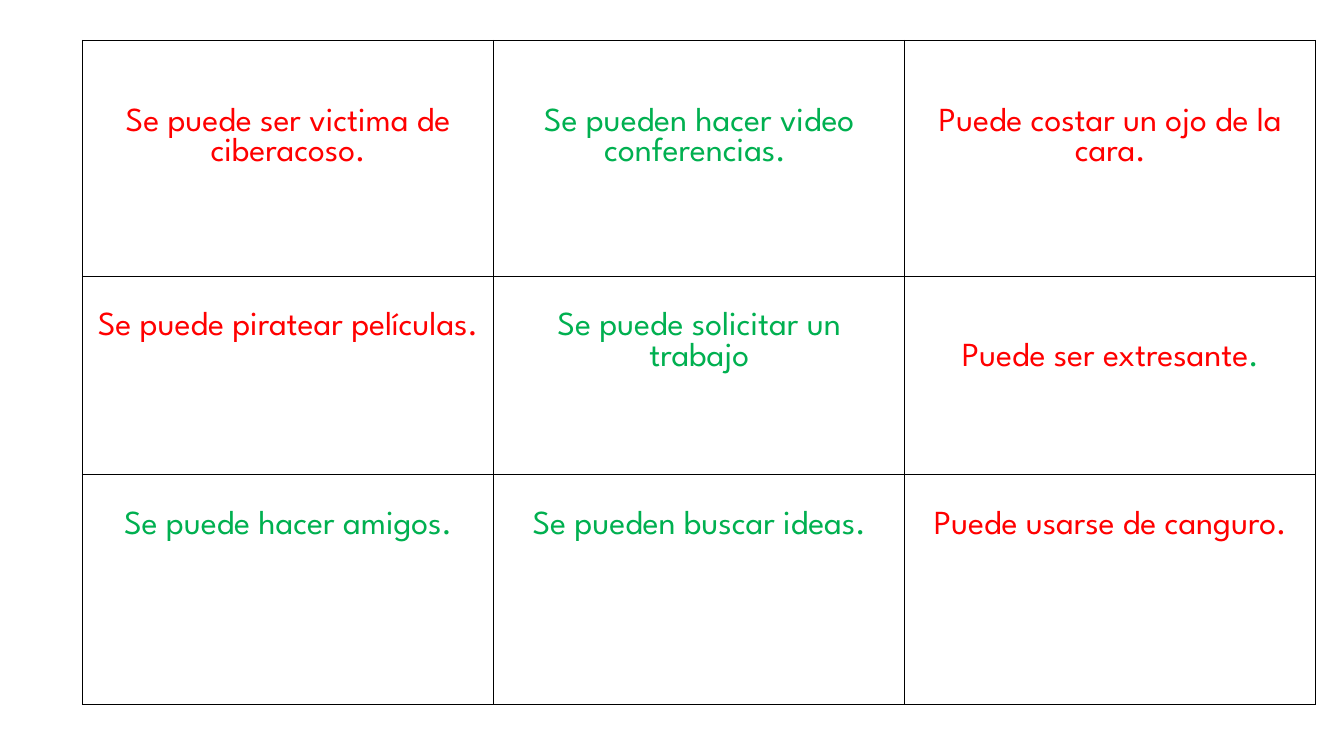
import pptx
import pptx.util
import pptx.dml.color
import pptx.enum.text
import pptx.oxml
import pptx.oxml.ns

Cm = pptx.util.Cm
Pt = pptx.util.Pt

COLORS = {"con": "FF0000", "pro": "00B050", "border": "000000"}
FONT = {"name": "League Spartan", "size": Pt(24)}
LINE = 0.78  # height of one text line, cm
MARGIN = 0.13  # plain cell margin, cm
COL_WIDTH = 10.36
ROW_HEIGHTS = [5.94, 5.0, 5.79]

# Each cell: lines of space above the text, then (text, colour) runs
CELLS = [
    [(2, [("Se puede ser victima de ciberacoso.", "con")]),
     (2, [("Se pueden hacer video conferencias. ", "pro")]),
     (2, [("Puede costar un ojo de la cara.", "con")])],
    [(1, [("Se puede piratear películas.", "con")]),
     (1, [("Se puede solicitar un trabajo", "pro")]),
     (2, [("Puede ser extresante", "con"), (".", "pro")])],
    [(1, [("Se puede hacer amigos.", "pro")]),
     (1, [("Se pueden buscar ideas.", "pro")]),
     (1, [("Puede usarse de canguro.", "con")])],
]


def set_borders(cell):
    tc_pr = cell._tc.get_or_add_tcPr()
    for side in ("lnL", "lnR", "lnT", "lnB"):
        tc_pr.append(pptx.oxml.parse_xml(
            f'<a:{side} {pptx.oxml.ns.nsdecls("a")} w="{Pt(1)}"><a:solidFill>'
            f'<a:srgbClr val="{COLORS["border"]}"/></a:solidFill></a:{side}>'))


def fill_cell(cell, lines_above, runs):
    set_borders(cell)
    cell.fill.background()
    cell.margin_top = Cm(MARGIN + lines_above * LINE)
    p = cell.text_frame.paragraphs[0]
    p.alignment = pptx.enum.text.PP_ALIGN.CENTER
    for text, color in runs:
        r = p.add_run()
        r.text = text
        for key, value in FONT.items():
            setattr(r.font, key, value)
        r.font.color.rgb = pptx.dml.color.RGBColor.from_string(COLORS[color])


def add_cards(s, left, top, width, height):
    n_rows, n_cols = len(CELLS), len(CELLS[0])
    table = s.shapes.add_table(n_rows, n_cols, Cm(left), Cm(top),
                               Cm(width), Cm(height)).table
    for flag in ("first_row", "horz_banding"):
        setattr(table, flag, False)
    for col in table.columns:
        col.width = Cm(width / n_cols)
    for i, row in enumerate(CELLS):
        table.rows[i].height = Cm(height * ROW_HEIGHTS[i] / sum(ROW_HEIGHTS))
        for j, (lines_above, runs) in enumerate(row):
            fill_cell(table.cell(i, j), lines_above, runs)


def main():
    prs = pptx.Presentation()
    prs.slide_width, prs.slide_height = Cm(33.87), Cm(19.05)
    s = prs.slides.add_slide(prs.slide_layouts[6])
    # Grid of pros and cons
    add_cards(s, 2.08, 1.02, 3 * COL_WIDTH, sum(ROW_HEIGHTS))
    prs.save("out.pptx")


if __name__ == "__main__":
    main()
